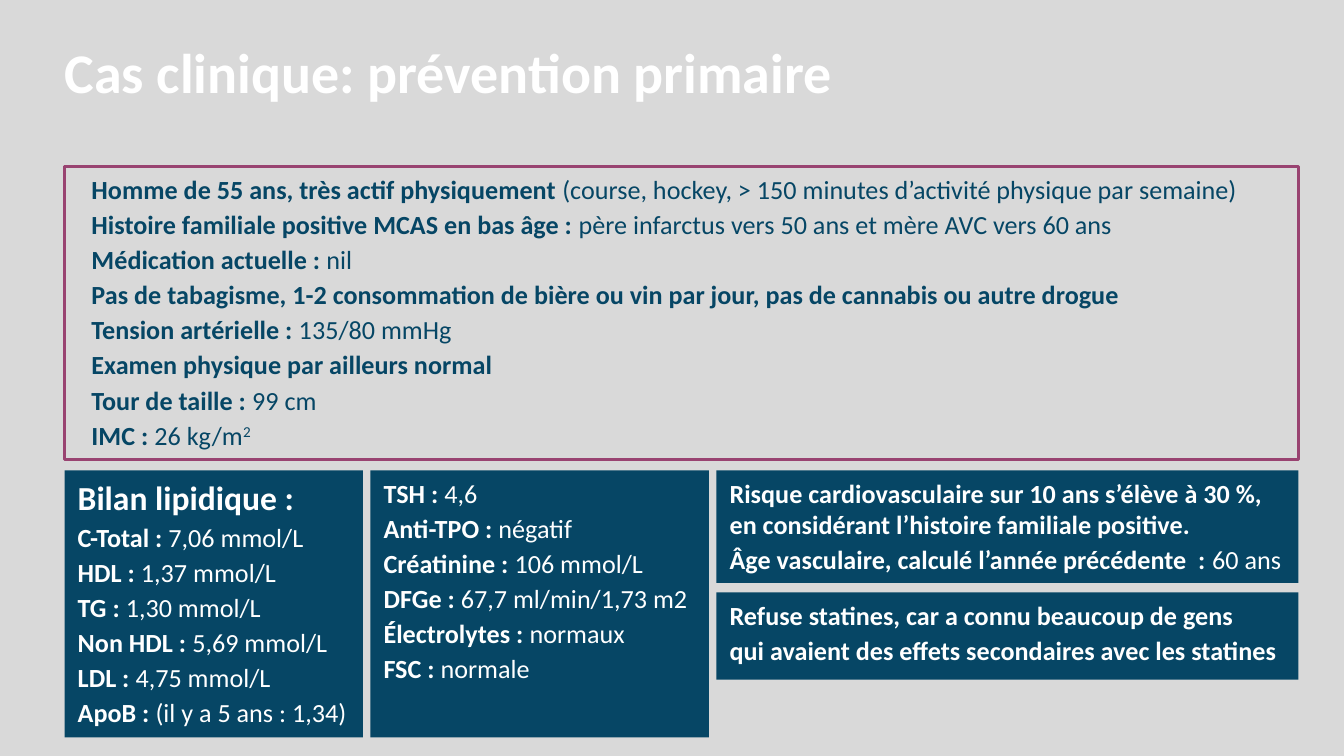
from lxml.etree import SubElement
from pptx import Presentation
from pptx.dml.color import RGBColor
from pptx.enum.shapes import MSO_SHAPE as Shape
from pptx.enum.text import MSO_ANCHOR as Anchor, PP_ALIGN as Align
from pptx.oxml import parse_xml
from pptx.oxml.ns import nsdecls, qn
from pptx.util import Cm, Pt

FONT = "Calibri"
NAVY, PLUM, WHITE, GREY = "064665", "994371", "FFFFFF", "D9D9D9"
LEFT, RIGHT, GAP = 1.22, 24.54, 0.14
PANEL_TOP, PANEL_HEIGHT = 8.89, 5.05

# Each line is a bold part, then a regular part, then a superscript.
PATIENT = [
    ("Homme de 55 ans, très actif physiquement ",
     "(course, hockey, > 150 minutes d’activité physique par semaine)"),
    ("Histoire familiale positive MCAS en bas âge : ",
     "père infarctus vers 50 ans et mère AVC vers 60 ans"),
    ("Médication actuelle : ", "nil"),
    ("Pas de tabagisme, 1-2 consommation de bière ou vin par jour, "
     "pas de cannabis ou autre drogue",),
    ("Tension artérielle : ", "135/80 mmHg"),
    ("Examen physique par ailleurs normal",),
    ("Tour de taille : ", "99 cm"),
    ("IMC : ", "26 kg/m", "2"),
]
LIPIDS = [
    ("Bilan lipidique :",),
    ("C-Total : ", "7,06 mmol/L"),
    ("HDL : ", "1,37 mmol/L"),
    ("TG : ", "1,30 mmol/L"),
    ("Non HDL : ", "5,69 mmol/L"),
    ("LDL : ", "4,75 mmol/L"),
    ("ApoB : ", "(il y a 5 ans : 1,34)"),
]
OTHER_TESTS = [
    ("TSH : ", "4,6"),
    ("Anti-TPO : ", "négatif"),
    ("Créatinine : ", "106 mmol/L"),
    ("DFGe : ", "67,7 ml/min/1,73 m2"),
    ("Électrolytes : ", "normaux"),
    ("FSC : ", "normale"),
]
RISK = [
    ("Risque cardiovasculaire sur 10 ans s’élève à 30 %, "
     "en considérant l’histoire familiale positive.",),
    ("Âge vasculaire, calculé l’année précédente  : ", "60 ans"),
]
REFUSAL = [
    ("Refuse statines, car a connu beaucoup de gens",),
    ("qui avaient des effets secondaires avec les statines",),
]


def rgb(color):
    return RGBColor.from_string(color)


def style_font(font, size, color, bold):
    font.name = FONT
    font.size = Pt(size)
    font.bold = bold
    font.color.rgb = rgb(color)


def add_text_shadow(run):
    properties = run.font._element if hasattr(run.font, "_element") else run._r.get_or_add_rPr()
    effects = parse_xml(
        f'<a:effectLst {nsdecls("a")}><a:outerShdw blurRad="38100" dist="38100" '
        'dir="2700000" algn="tl"><a:srgbClr val="000000"><a:alpha val="43137"/>'
        '</a:srgbClr></a:outerShdw></a:effectLst>')
    properties.find(qn("a:solidFill")).addnext(effects)


def set_title(slide, text):
    title = slide.shapes.title
    title.left, title.top, title.width, title.height = Cm(LEFT), Cm(0.69), Cm(19.76), Cm(1.55)
    frame = title.text_frame
    frame.text = text
    frame.margin_left = frame.margin_right = 0
    frame.vertical_anchor = Anchor.MIDDLE
    paragraph = frame.paragraphs[0]
    paragraph.alignment = Align.LEFT
    paragraph.line_spacing = 0.8
    run = paragraph.runs[0]
    style_font(run.font, 30, WHITE, True)
    add_text_shadow(run)


def write_lines(frame, lines, color):
    for index, parts in enumerate(lines):
        paragraph = frame.paragraphs[0] if index == 0 else frame.add_paragraph()
        paragraph.alignment = Align.LEFT
        if index:
            paragraph.space_before = Pt(2)
        for position, text in enumerate(parts):
            run = paragraph.add_run()
            run.text = text
            style_font(run.font, 14, color, position == 0)
            if position == 2:
                run._r.get_or_add_rPr().set("baseline", "30000")


def add_box(slide, left, top, width, height, lines, color=WHITE):
    box = slide.shapes.add_shape(Shape.RECTANGLE, Cm(left), Cm(top), Cm(width), Cm(height))
    box.shadow.inherit = False
    box.fill.solid()
    box.fill.fore_color.rgb = rgb(NAVY)
    box.line.fill.background()
    box.text_frame.word_wrap = True
    box.text_frame.vertical_anchor = Anchor.TOP
    write_lines(box.text_frame, lines, color)
    return box


def add_patient_box(slide):
    box = add_box(slide, LEFT, 3.15, RIGHT - LEFT, 5.54, PATIENT, NAVY)
    box.fill.background()
    box.line.color.rgb = rgb(PLUM)
    box.line.width = Pt(1.5)
    box.text_frame.margin_left = Cm(0.51)


def add_panels(slide):
    lipid_width, tests_width = 5.64, 6.4
    tests_left = LEFT + lipid_width + GAP
    risk_left = tests_left + tests_width + GAP
    risk_width = RIGHT - risk_left

    lipids = add_box(slide, LEFT, PANEL_TOP, lipid_width, PANEL_HEIGHT, LIPIDS)
    lipids.text_frame.word_wrap = False
    lipids.text_frame.paragraphs[0].runs[0].font.size = Pt(18)
    add_box(slide, tests_left, PANEL_TOP, tests_width, PANEL_HEIGHT, OTHER_TESTS)
    add_box(slide, risk_left, PANEL_TOP, risk_width, 2.13, RISK)
    add_box(slide, risk_left, 11.2, risk_width, 1.65, REFUSAL)


def main():
    presentation = Presentation()
    presentation.slide_width, presentation.slide_height = Cm(25.4), Cm(14.29)
    slide = presentation.slides.add_slide(presentation.slide_layouts[5])
    slide.background.fill.solid()
    slide.background.fill.fore_color.rgb = rgb(GREY)
    set_title(slide, "Cas clinique: prévention primaire")
    add_patient_box(slide)
    add_panels(slide)
    presentation.save("out.pptx")


if __name__ == "__main__":
    main()
